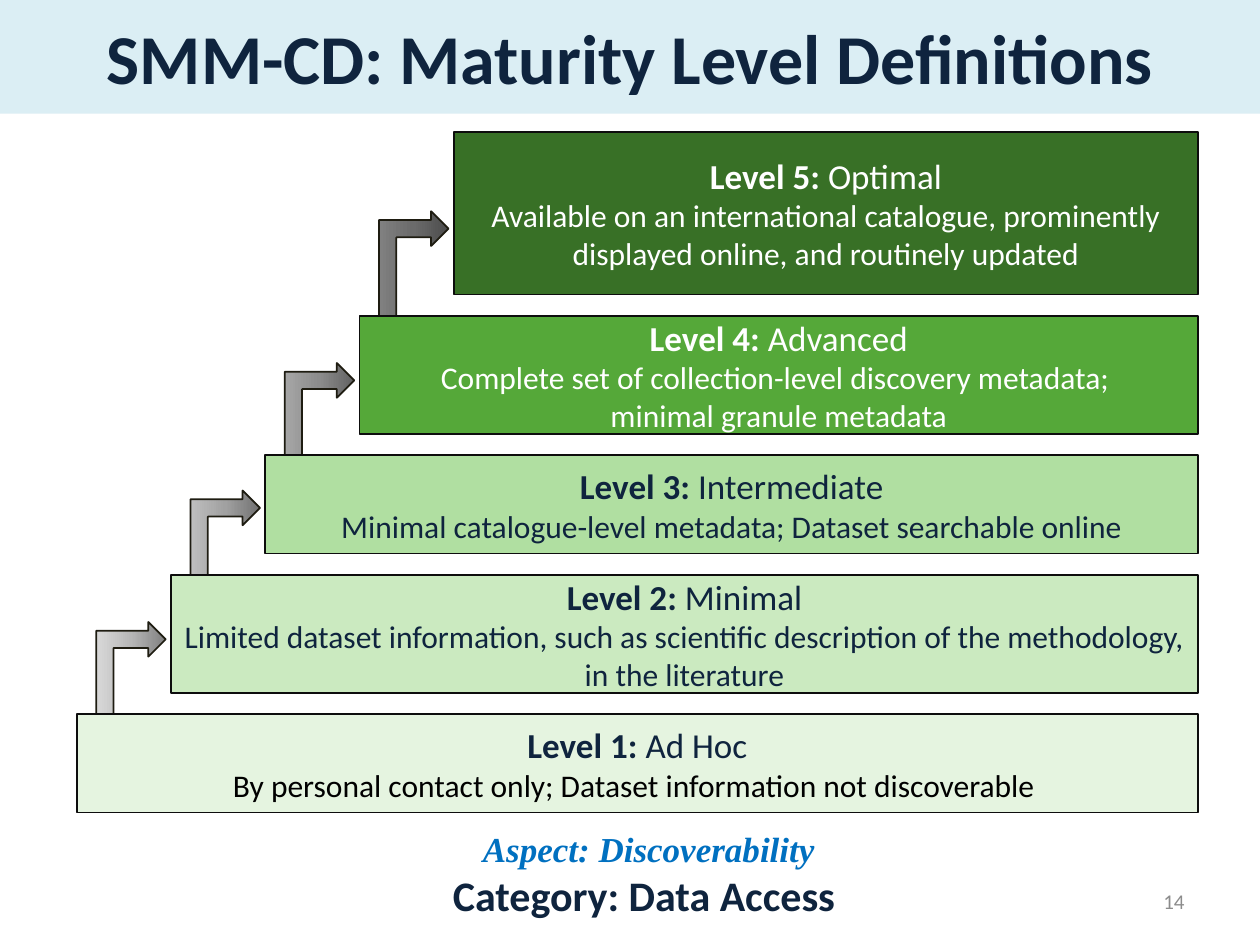
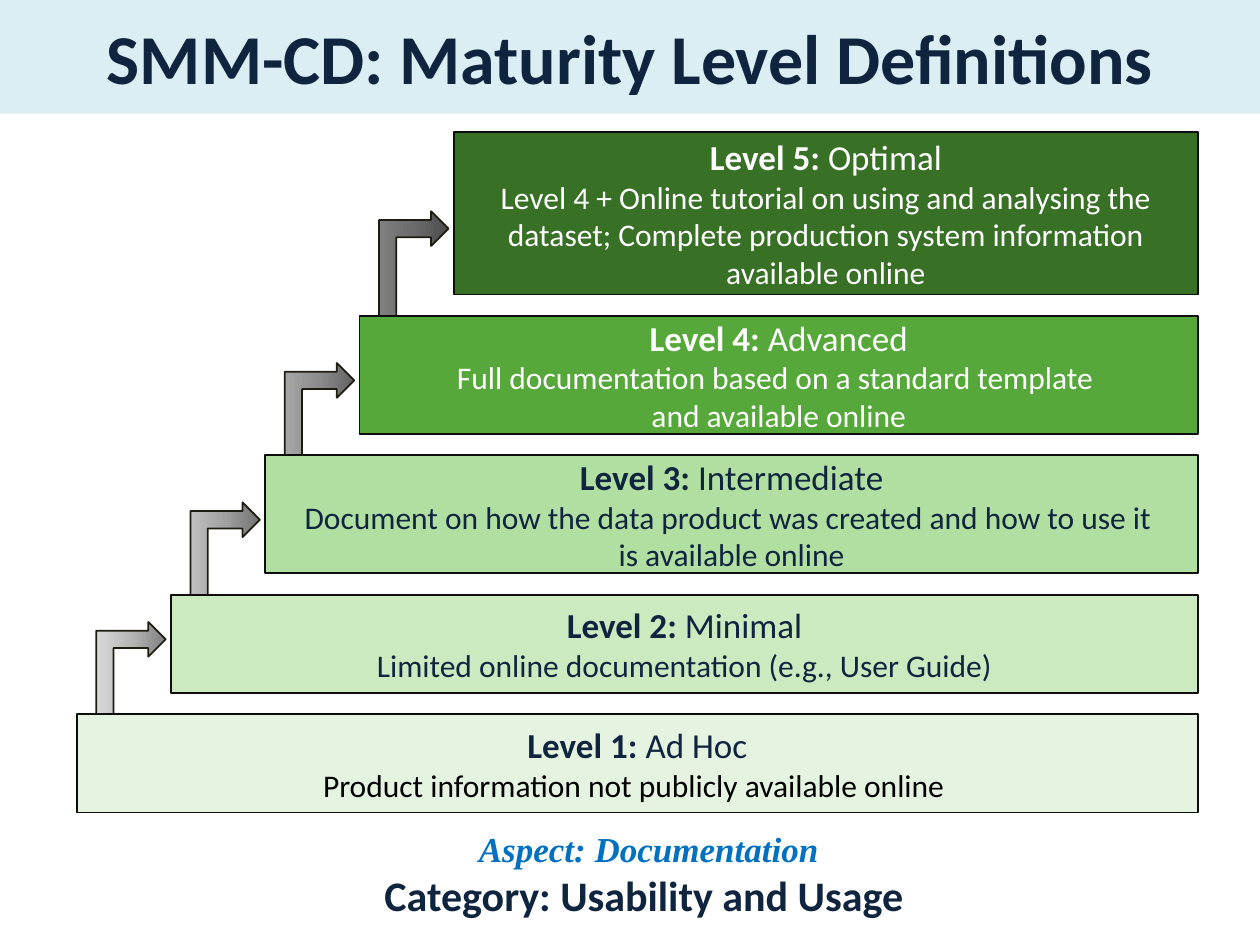
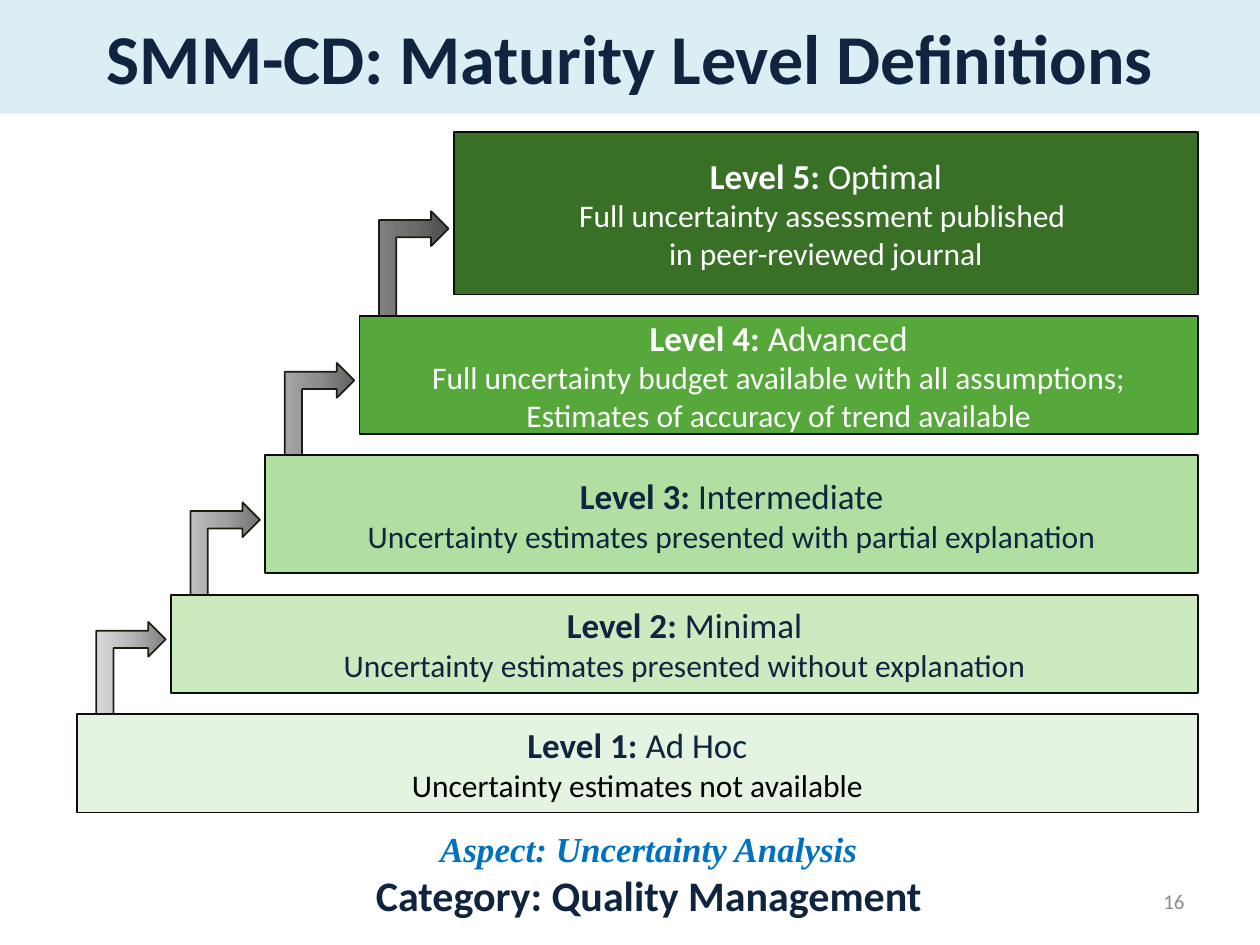
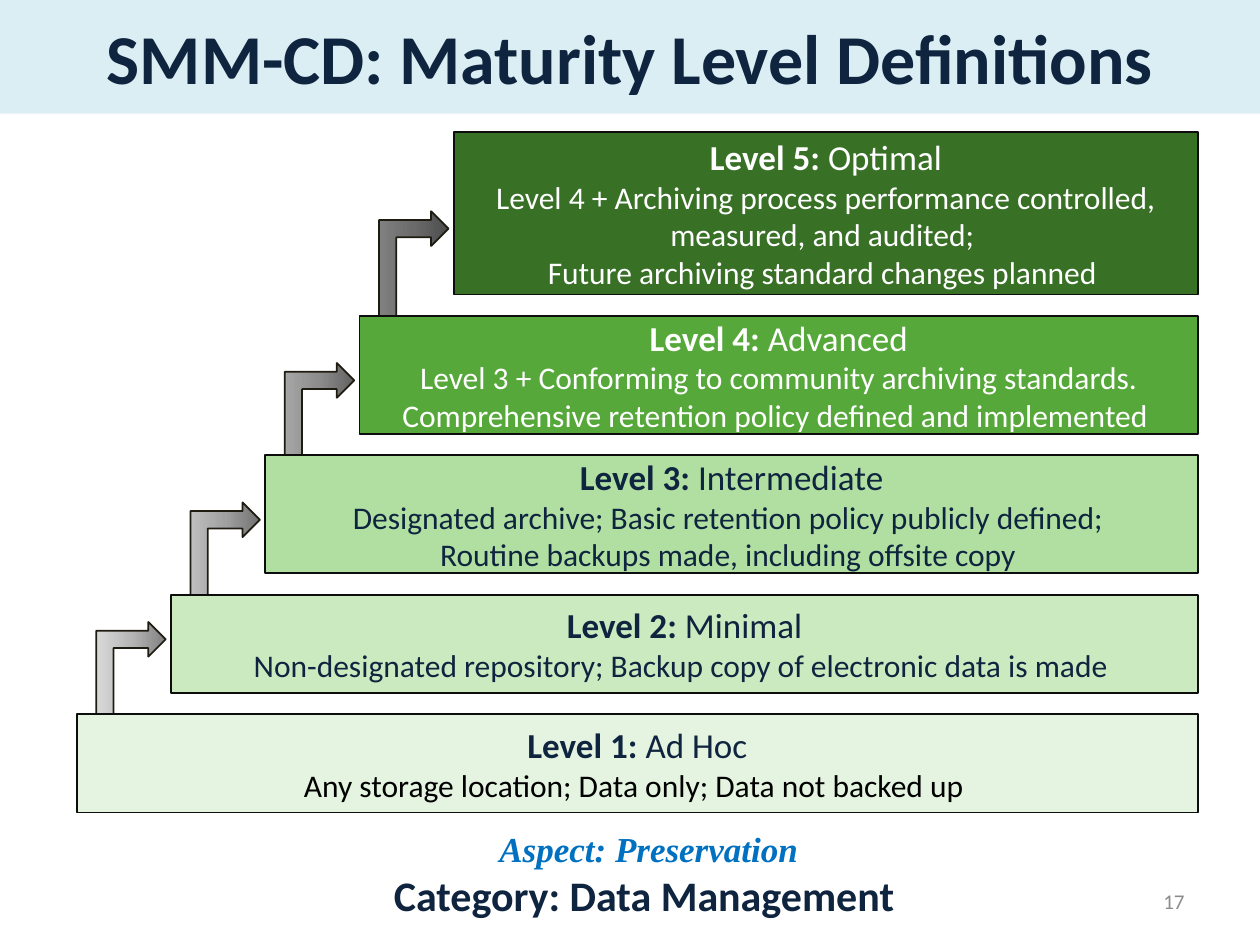
from dataclasses import dataclass

from lxml import etree
from pptx import Presentation
from pptx.dml.color import RGBColor
from pptx.enum.shapes import MSO_SHAPE
from pptx.enum.text import MSO_ANCHOR, MSO_AUTO_SIZE, PP_ALIGN
from pptx.oxml import parse_xml
from pptx.oxml.ns import nsdecls, qn
from pptx.util import Cm, Pt

RECTANGLE = MSO_SHAPE.RECTANGLE
BENT_ARROW = MSO_SHAPE.BENT_UP_ARROW
MIDDLE = MSO_ANCHOR.MIDDLE
FIT_SHAPE = MSO_AUTO_SIZE.SHAPE_TO_FIT_TEXT
CENTER, RIGHT = PP_ALIGN.CENTER, PP_ALIGN.RIGHT

COLORS = {
    "band": "DBEEF4", "navy": "0F243E", "white": "FFFFFF", "black": "000000",
    "aspect": "0070C0", "number": "8C8C8C",
    "step_line": "0D0D0D", "arrow_line": "1E1C11",
}
BODY_FONT, ASPECT_FONT = "Calibri", "Times New Roman"
TITLE = "SMM-CD: Maturity Level Definitions"

# Level name, step fill, heading colour, detail colour; from the bottom step up
LEVELS = [
    ("Ad Hoc", "E5F4E0", "navy", "black"),
    ("Minimal", "CBEAC0", "navy", "navy"),
    ("Intermediate", "B0DFA1", "navy", "navy"),
    ("Advanced", "55A839", "white", "white"),
    ("Optimal", "387026", "white", "white"),
]
# Gradient stops of the arrow that leaves each step
ARROW_GREYS = [
    ("808080", "B7B7B7", "D9D9D9"),
    ("717171", "A1A1A1", "BFBFBF"),
    ("626262", "8C8C8C", "A6A6A6"),
    ("4C4C4C", "6B6B6B", "808080"),
]

# Boxes are left, top, width, height in centimetres
TITLE_BOX = (0, 0, 25.4, 2.29)
STAIRS_BOX = (1.55, 2.66, 22.6, 13.72)
CAPTION_BOX = (7.28, 16.56, 11.6, 2.13)
NUMBER_BOX = (18.21, 17.65, 5.92, 1.02)

STEP_INDENT, STEP_GAP = 1.9, 0.43
LOW_STEP, TALL_STEP, TOP_STEP = 1.98, 2.38, 3.28
ARROW_WIDTH, ARROW_LENGTH, TOP_ARROW_LENGTH = 1.4, 1.88, 2.13
ARROW_INSET = 0.39


@dataclass
class Aspect:
    """One aspect; details run from level 1 to 5, and tall_level is 2 or 3."""
    name: str
    category: str
    tall_level: int
    details: list
    number: str = ""


ASPECTS = [
    Aspect("Discoverability", "Data Access ", 2, [
        ["By personal contact only; Dataset information not discoverable "],
        ["Limited dataset information, such as scientific description of the "
         "methodology, in the literature"],
        ["Minimal catalogue-level metadata; Dataset searchable online"],
        ["Complete set of collection-level discovery metadata; ",
         "minimal granule metadata"],
        ["Available on an international catalogue, prominently displayed "
         "online, and routinely updated"],
    ], "14"),
    Aspect("Documentation", "Usability and Usage ", 3, [
        ["Product information not publicly available online "],
        ["Limited online documentation (e.g., User Guide)"],
        ["Document on how the data product was created and how to use it ",
         "is available online"],
        ["Full documentation based on a standard template ",
         "and available online"],
        ["Level 4 + Online tutorial on using and analysing the dataset; "
         "Complete production system information available online"],
    ]),
    Aspect("Uncertainty Analysis", "Quality Management", 3, [
        ["Uncertainty estimates not available"],
        ["Uncertainty estimates presented without explanation"],
        ["Uncertainty estimates presented with partial explanation"],
        ["Full uncertainty budget available with all assumptions; "
         "Estimates of accuracy of trend available"],
        ["Full uncertainty assessment published ",
         "in peer-reviewed journal"],
    ], "16"),
    Aspect("Preservation", "Data Management ", 3, [
        ["Any storage location; Data only; Data not backed up "],
        ["Non-designated repository; Backup copy of electronic data is made "],
        ["Designated archive; Basic retention policy publicly defined; ",
         "Routine backups made, including offsite copy "],
        ["Level 3 + Conforming to community archiving standards. "
         "Comprehensive retention policy defined and implemented "],
        ["Level 4 + Archiving process performance controlled, measured, "
         "and audited; ",
         "Future archiving standard changes planned "],
    ], "17"),
]


def rgb(name):
    return RGBColor.from_string(COLORS.get(name, name))


def cm_box(box):
    return [Cm(length) for length in box]


def style(paragraph, size, color, bold=None, font=BODY_FONT, align=CENTER):
    paragraph.alignment = align
    paragraph.font.name = font
    paragraph.font.size = Pt(size)
    paragraph.font.color.rgb = rgb(color)
    paragraph.font.bold = bold


def add_outlined(slide, preset, box, line):
    shape = slide.shapes.add_shape(preset, *cm_box(box))
    shape.shadow.inherit = False
    shape.line.color.rgb = rgb(line)
    shape.line.width = Pt(1)
    return shape


def add_title(slide, box):
    title = slide.shapes.title
    title.left, title.top, title.width, title.height = cm_box(box)
    title.fill.solid()
    title.fill.fore_color.rgb = rgb("band")
    title.text_frame.text = TITLE
    title.text_frame.vertical_anchor = MIDDLE
    style(title.text_frame.paragraphs[0], 40, "navy", bold=True)


def add_step(slide, box, level, details):
    name, fill, heading_color, detail_color = LEVELS[level - 1]
    step = add_outlined(slide, RECTANGLE, box, "step_line")
    step.fill.solid()
    step.fill.fore_color.rgb = rgb(fill)
    frame = step.text_frame
    frame.word_wrap = True
    frame.vertical_anchor = MIDDLE
    frame.margin_left = frame.margin_right = Cm(0.23)
    frame.margin_top = frame.margin_bottom = Cm(0.1)

    heading = frame.paragraphs[0]
    style(heading, 20, heading_color)
    for text, bold in ((f"Level {level}: ", True), (name, False)):
        run = heading.add_run()
        run.text = text
        run.font.bold = bold
    for line in details:
        detail = frame.add_paragraph()
        detail.text = line
        style(detail, 18, detail_color)


def add_arrow(slide, box, greys):
    """Fill the box with an arrow that rises and then points right."""
    left, top, width, height = box
    # The quarter turn swaps the sides about the centre of the box
    shift = (height - width) / 2
    arrow = add_outlined(slide, BENT_ARROW,
                         (left - shift, top + shift, height, width),
                         "arrow_line")
    arrow.rotation = 270
    properties = arrow.element.spPr
    properties.find(qn("a:xfrm")).set("flipV", "1")
    gradient = parse_xml(f'<a:gradFill {nsdecls("a")} rotWithShape="1"/>')
    stops = etree.SubElement(gradient, qn("a:gsLst"))
    for index, grey in enumerate(greys):
        stop = etree.SubElement(stops, qn("a:gs"), pos=str(index * 50000))
        etree.SubElement(stop, qn("a:srgbClr"), val=grey)
    etree.SubElement(gradient, qn("a:lin"), ang="5400000", scaled="0")
    properties.find(qn("a:prstGeom")).addnext(gradient)


def add_stairs(slide, box, aspect):
    """Stack the steps from the bottom of the box, each indented further."""
    left, top, width, height = box
    heights = [LOW_STEP, LOW_STEP, LOW_STEP, TALL_STEP, TOP_STEP]
    heights[aspect.tall_level - 1] = TALL_STEP
    steps = []
    bottom = top + height
    for index, step_height in enumerate(heights):
        indent = index * STEP_INDENT
        steps.append((left + indent, bottom - step_height,
                      width - indent, step_height))
        bottom -= step_height + STEP_GAP

    for index, greys in enumerate(ARROW_GREYS):
        step_left, step_top = steps[index][:2]
        length = TOP_ARROW_LENGTH if index == 3 else ARROW_LENGTH
        # The arrow from a tall second step starts behind that step
        tuck = 0.18 if (index, aspect.tall_level) == (1, 2) else 0.02
        add_arrow(slide, (step_left + ARROW_INSET, step_top + tuck - length,
                          ARROW_WIDTH, length), greys)
    for level, (step, details) in enumerate(zip(steps, aspect.details), 1):
        add_step(slide, step, level, details)


def add_caption(slide, box, aspect):
    frame = slide.shapes.add_textbox(*cm_box(box)).text_frame
    frame.word_wrap = False
    frame.auto_size = FIT_SHAPE
    aspect_line = frame.paragraphs[0]
    aspect_line.text = f"Aspect: {aspect.name}"
    style(aspect_line, 20, "aspect", bold=True, font=ASPECT_FONT)
    aspect_line.font.italic = True
    category_line = frame.add_paragraph()
    category_line.text = f"Category: {aspect.category}"
    style(category_line, 24, "navy", bold=True)


def add_number(slide, box, number):
    frame = slide.shapes.add_textbox(*cm_box(box)).text_frame
    frame.word_wrap = True
    frame.vertical_anchor = MIDDLE
    frame.text = number
    style(frame.paragraphs[0], 12, "number", align=RIGHT)


def add_aspect_slide(prs, aspect):
    slide = prs.slides.add_slide(prs.slide_layouts.get_by_name("Title Only"))
    add_title(slide, TITLE_BOX)
    add_stairs(slide, STAIRS_BOX, aspect)
    add_caption(slide, CAPTION_BOX, aspect)
    if aspect.number:
        add_number(slide, NUMBER_BOX, aspect.number)


def main():
    prs = Presentation()
    prs.slide_width, prs.slide_height = Cm(25.4), Cm(19.05)
    for aspect in ASPECTS:
        add_aspect_slide(prs, aspect)
    prs.save("out.pptx")


if __name__ == "__main__":
    main()
